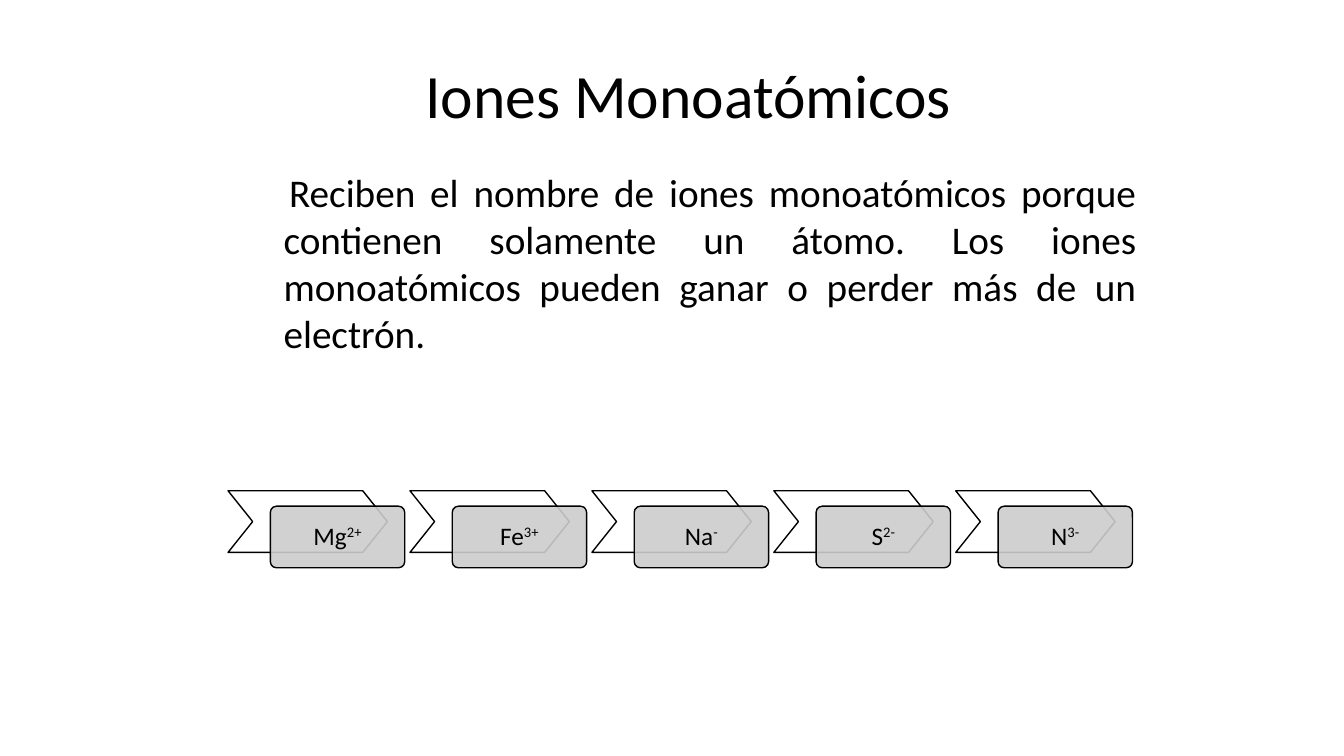
from lxml import etree
from pptx import Presentation
from pptx.dml.color import RGBColor
from pptx.enum.shapes import MSO_SHAPE
from pptx.enum.text import MSO_ANCHOR, PP_ALIGN
from pptx.oxml.ns import qn
from pptx.util import Pt

CHEVRON, ROUNDED = MSO_SHAPE.CHEVRON, MSO_SHAPE.ROUNDED_RECTANGLE
CENTER, JUSTIFY = PP_ALIGN.CENTER, PP_ALIGN.JUSTIFY
MIDDLE = MSO_ANCHOR.MIDDLE

BLACK, WHITE, GRAY = "000000", "FFFFFF", "CCCCCC"
IONS = [("Mg", "2+"), ("Fe", "3+"), ("Na", "-"), ("S", "2-"), ("N", "3-")]
ION_STEP = 129.95


def add_span(para, text, size):
    span = para.add_run()
    span.text = text
    for name, value in {"name": "Calibri", "size": Pt(size)}.items():
        setattr(span.font, name, value)
    span.font.color.rgb = RGBColor.from_string(BLACK)
    return span


def add_outlined(kind, left, top, width, height, adjustment, fill):
    shape = slide.shapes.add_shape(kind, Pt(left), Pt(top), Pt(width), Pt(height))
    shape.shadow.inherit = False
    shape.adjustments[0] = adjustment
    shape.fill.solid()
    shape.fill.fore_color.rgb = RGBColor.from_string(fill)
    shape.line.color.rgb = RGBColor.from_string(BLACK)
    shape.line.width = Pt(1)
    return shape


deck = Presentation()
deck.slide_width, deck.slide_height = Pt(960), Pt(540)
slide = deck.slides.add_slide(deck.slide_layouts[6])

# Title and definition
texts = [
    ("Iones Monoatómicos", 44, CENTER, (167.8, 37.4, 648, 72.7)),
    ("Reciben el nombre de iones monoatómicos porque contienen solamente un átomo. "
     "Los iones monoatómicos pueden ganar o perder más de un electrón.",
     28, JUSTIFY, (168.5, 116.6, 650.2, 147.6)),
]
for text, size, alignment, place in texts:
    box = slide.shapes.add_textbox(*map(Pt, place))
    box.text_frame.word_wrap = True
    para = box.text_frame.paragraphs[0]
    para.alignment = alignment
    add_span(para, text, size)

# The definition, last in the loop, has an indented first line
indents = para._p.get_or_add_pPr()
indents.set("marL", str(Pt(27)))
indents.set("indent", str(Pt(4)))

# Row of ions
for index, (symbol, charge) in enumerate(IONS):
    left = 162.9 + index * ION_STEP
    add_outlined(CHEVRON, left, 350.6, 113.8, 44, 0.4, WHITE)
    label = add_outlined(ROUNDED, left + 30.2, 361.6, 96, 44, 0.1, GRAY)
    color = label.fill._xPr.find(".//" + qn("a:srgbClr"))
    etree.SubElement(color, qn("a:alpha"), val="90000")

    frame = label.text_frame
    frame.word_wrap = True
    frame.vertical_anchor = MIDDLE
    para = frame.paragraphs[0]
    para.alignment = CENTER
    para.line_spacing = 0.9
    add_span(para, symbol, 18)
    superscript = add_span(para, charge, 18)
    superscript.font._element.set("baseline", "30000")

deck.save("out.pptx")
